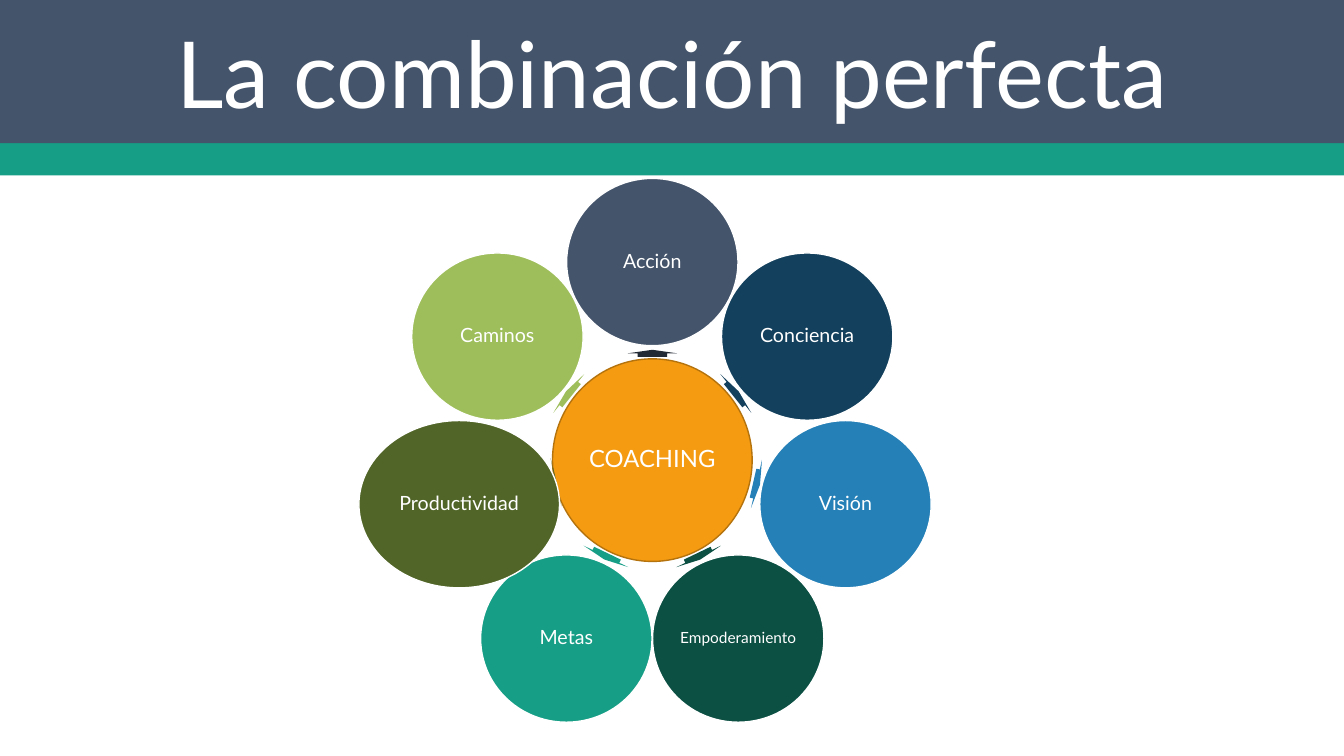
from math import cos, radians, sin

from pptx import Presentation
from pptx.dml.color import RGBColor
from pptx.enum.shapes import MSO_SHAPE
from pptx.enum.text import MSO_ANCHOR, PP_ALIGN
from pptx.util import Inches, Pt

TITLE = "La combinación perfecta"
HUB = "COACHING"
PETALS = [
    {"label": "Acción", "fill": "44546A", "arrow_fill": "222A35"},
    {"label": "Conciencia", "fill": "13405C"},
    {"label": "Visión", "fill": "2580B7"},
    {"label": "Empoderamiento", "fill": "0C4F43", "size": 11},
    {"label": "Metas", "fill": "179E86"},
    {"label": "Productividad", "fill": "516528", "width": 1.99,
     "arrow_length": 0.01, "arrow_radius": 0.98},
    {"label": "Caminos", "fill": "9EBE5B"},
]

THEME = {
    "font": "Lato", "text": "FFFFFF", "outline": "FFFFFF",
    "band": "44546A", "accent": "179E86",
    "hub": "F59B11", "hub_outline": "B5730D",
    "title_size": 66, "hub_size": 17, "petal_size": 14,
}

SLIDE_W, SLIDE_H = 13.33, 7.5
BAND_H, ACCENT_H = 1.42, 1.74
CENTER_X, CENTER_Y = 6.47, 4.565
HUB_W, HUB_H = 1.98, 2.01
PETAL_W, PETAL_H, PETAL_RADIUS = 1.7, 1.66, 1.965
ARROW_LENGTH, ARROW_H, ARROW_RADIUS = 0.07, 0.49, 1.06
INSET = 0.02


def add_filled(slide, kind, left, top, width, height, fill, outline=None):
    shape = slide.shapes.add_shape(
        kind, Inches(left), Inches(top), Inches(width), Inches(height))
    shape.shadow.inherit = False
    shape.fill.solid()
    shape.fill.fore_color.rgb = RGBColor.from_string(fill)
    if outline:
        shape.line.color.rgb = RGBColor.from_string(outline)
        shape.line.width = Pt(1)
    else:
        shape.line.fill.background()
    return shape


def add_centered(slide, kind, angle, radius, width, height, fill, outline=None):
    x = CENTER_X + radius * sin(radians(angle))
    y = CENTER_Y - radius * cos(radians(angle))
    return add_filled(slide, kind, x - width / 2, y - height / 2,
                      width, height, fill, outline)


def write(shape, text, size):
    frame = shape.text_frame
    frame.vertical_anchor = MSO_ANCHOR.MIDDLE
    paragraph = frame.paragraphs[0]
    paragraph.text = text
    paragraph.alignment = PP_ALIGN.CENTER
    paragraph.font.name = THEME["font"]
    paragraph.font.size = Pt(size)
    paragraph.font.color.rgb = RGBColor.from_string(THEME["text"])


def write_circle(circle, text, size):
    write(circle, text, size)
    frame = circle.text_frame
    frame.word_wrap = False
    frame.margin_left = frame.margin_right = Inches(INSET)
    frame.margin_top = frame.margin_bottom = Inches(INSET)
    frame.paragraphs[0].line_spacing = 0.9


def add_petal(slide, petal, angle):
    arrow = add_centered(
        slide, MSO_SHAPE.RIGHT_ARROW, angle,
        petal.get("arrow_radius", ARROW_RADIUS),
        petal.get("arrow_length", ARROW_LENGTH), ARROW_H,
        petal.get("arrow_fill", petal["fill"]))
    arrow.adjustments[0] = 0.6
    arrow.adjustments[1] = 0.5
    arrow.rotation = (angle - 90) % 360

    circle = add_centered(
        slide, MSO_SHAPE.OVAL, angle, PETAL_RADIUS,
        petal.get("width", PETAL_W), PETAL_H, petal["fill"], THEME["outline"])
    write_circle(circle, petal["label"], petal.get("size", THEME["petal_size"]))


def main():
    deck = Presentation()
    deck.slide_width, deck.slide_height = Inches(SLIDE_W), Inches(SLIDE_H)
    slide = deck.slides.add_slide(deck.slide_layouts[6])

    add_filled(slide, MSO_SHAPE.RECTANGLE, 0, 0, SLIDE_W, ACCENT_H, THEME["accent"])
    band = add_filled(slide, MSO_SHAPE.RECTANGLE, 0, 0, SLIDE_W, BAND_H, THEME["band"])
    write(band, TITLE, THEME["title_size"])

    hub = add_centered(slide, MSO_SHAPE.OVAL, 0, 0, HUB_W, HUB_H,
                       THEME["hub"], THEME["hub_outline"])
    write_circle(hub, HUB, THEME["hub_size"])

    for index, petal in enumerate(PETALS):
        add_petal(slide, petal, index * 360 / len(PETALS))

    deck.save("out.pptx")


if __name__ == "__main__":
    main()
